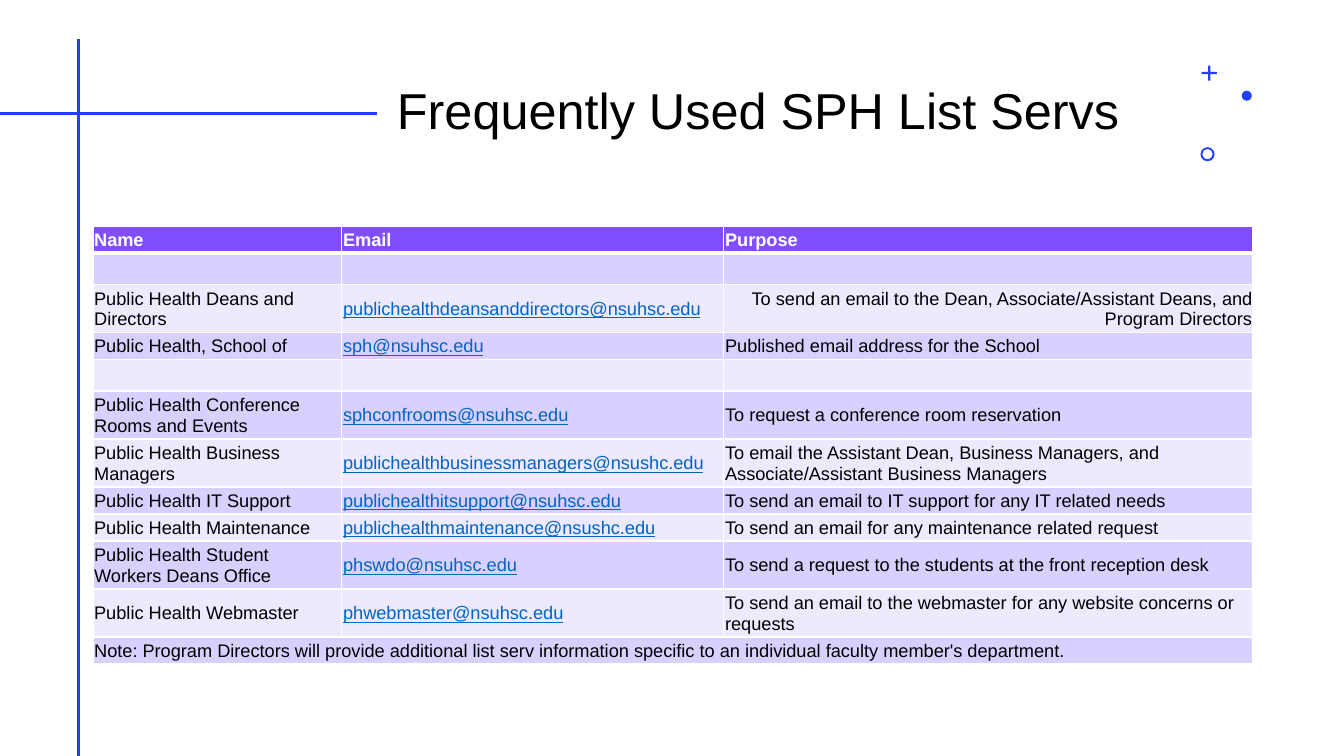
from lxml import etree
from pptx import Presentation
from pptx.dml.color import RGBColor
from pptx.enum.shapes import MSO_CONNECTOR, MSO_SHAPE
from pptx.enum.text import MSO_ANCHOR, PP_ALIGN
from pptx.oxml import parse_xml
from pptx.oxml.ns import nsdecls, qn
from pptx.util import Pt

STRAIGHT = MSO_CONNECTOR.STRAIGHT
CROSS, OVAL, DONUT = MSO_SHAPE.CROSS, MSO_SHAPE.OVAL, MSO_SHAPE.DONUT
MIDDLE = MSO_ANCHOR.MIDDLE
LEFT, RIGHT = PP_ALIGN.LEFT, PP_ALIGN.RIGHT

BLUE, BLACK, WHITE, LINK = "243FFF", "000000", "FFFFFF", "0563C1"
HEADER, BANDS = "814DFF", ("D8D0FF", "EDE9FF")
BODY = {"name": "Arial", "size": Pt(13), "bold": False}
HEAD = {**BODY, "bold": True}
EMAIL = {**BODY, "underline": True}
TITLE = {"name": "Arial", "size": Pt(36)}
CELL = {"vertical_anchor": MIDDLE, "margin_left": Pt(0.9), "margin_right": Pt(0.9),
        "margin_top": Pt(0.9), "margin_bottom": Pt(0)}

SHORT, TALL = 19.3, 34.3
COL_WIDTHS = (177.8, 272.9, 378)
ROWS = [
    (SHORT, "Name", "Email", "Purpose"),
    (SHORT, "", "", ""),
    (TALL, "Public Health Deans and Directors", "publichealthdeansanddirectors@nsuhsc.edu",
     "To send an email to the Dean, Associate/Assistant Deans, and Program Directors"),
    (SHORT, "Public Health, School of", "sph@nsuhsc.edu",
     "Published email address for the School"),
    (SHORT, "", "", ""),
    (TALL, "Public Health Conference Rooms and Events", "sphconfrooms@nsuhsc.edu",
     "To request a conference room reservation"),
    (TALL, "Public Health Business Managers", "publichealthbusinessmanagers@nsushc.edu",
     "To email the Assistant Dean, Business Managers, and "
     "Associate/Assistant Business Managers"),
    (SHORT, "Public Health IT Support", "publichealthitsupport@nsuhsc.edu",
     "To send an email to IT support for any IT related needs"),
    (SHORT, "Public Health Maintenance", "publichealthmaintenance@nsushc.edu",
     "To send an email for any maintenance related request"),
    (TALL, "Public Health Student Workers Deans Office", "phswdo@nsuhsc.edu",
     "To send a request to the students at the front reception desk"),
    (TALL, "Public Health Webmaster", "phwebmaster@nsuhsc.edu",
     "To send an email to the webmaster for any website concerns or requests"),
    (SHORT, "Note: Program Directors will provide additional list serv information "
     "specific to an individual faculty member's department.", "", ""),
]


def rgb(value):
    """Return the colour of a hex string."""
    return RGBColor.from_string(value)


def set_all(obj, values):
    """Set every attribute named in a dict."""
    for name, value in values.items():
        setattr(obj, name, value)


def write(tf, text, font, color, align=LEFT):
    """Write one formatted run into the first paragraph."""
    p = tf.paragraphs[0]
    p.alignment = align
    r = p.add_run()
    r.text = text
    set_all(r.font, font)
    r.font.color.rgb = rgb(color)
    return p


def add_rule(s, x1, y1, x2, y2):
    """Draw a blue straight line."""
    line = s.shapes.add_connector(STRAIGHT, Pt(x1), Pt(y1), Pt(x2), Pt(y2))
    line.line.color.rgb = rgb(BLUE)
    line.line.width = Pt(2)
    etree.SubElement(line._element.spPr, qn("a:effectLst"))


def add_ornament(s, kind, x, y, size, adjust=None):
    """Draw a small blue shape without outline."""
    sp = s.shapes.add_shape(kind, Pt(x), Pt(y), Pt(size), Pt(size))
    sp.shadow.inherit = False
    sp.fill.solid()
    sp.fill.fore_color.rgb = rgb(BLUE)
    sp.line.fill.background()
    if adjust is not None:
        sp.adjustments[0] = adjust


def add_title(s, text):
    """Add the slide title."""
    box = s.shapes.add_textbox(Pt(276.5), Pt(28.8), Pt(563.8), Pt(104.4))
    tf = box.text_frame
    set_all(tf, {"word_wrap": True, "vertical_anchor": MIDDLE})
    write(tf, text, TITLE, BLACK).line_spacing = 0.9


def add_border(cell, side, width):
    """Add a white border to one side of a cell."""
    cell._tc.get_or_add_tcPr().append(parse_xml(
        f'<a:ln{side} {nsdecls("a")} w="{Pt(width)}"><a:solidFill>'
        f'<a:srgbClr val="{WHITE}"/></a:solidFill></a:ln{side}>'))


def style_cell(cell, row, fill):
    """Set the margins, borders and fill of a cell."""
    set_all(cell, CELL)
    widths = {"L": 1, "R": 1, "T": 3 if row == 1 else 1, "B": 3 if row == 0 else 1}
    for side, width in widths.items():
        add_border(cell, side, width)
    cell.fill.solid()
    cell.fill.fore_color.rgb = rgb(fill)


def add_list_table(s):
    """Add the table of mailing lists."""
    height = sum(row[0] for row in ROWS)
    table = s.shapes.add_table(len(ROWS), len(COL_WIDTHS), Pt(66.4), Pt(161.4),
                               Pt(sum(COL_WIDTHS)), Pt(height)).table
    for column, width in zip(table.columns, COL_WIDTHS):
        column.width = Pt(width)
    for i, (row_height, *texts) in enumerate(ROWS):
        table.rows[i].height = Pt(row_height)
        for j, text in enumerate(texts):
            cell = table.cell(i, j)
            style_cell(cell, i, BANDS[(i - 1) % 2] if i else HEADER)
            if i == 0:
                font, color = HEAD, WHITE
            elif j == 1 and text:
                font, color = EMAIL, LINK
            else:
                font, color = BODY, BLACK
            align = RIGHT if (i, j) == (2, 2) else LEFT
            write(cell.text_frame, text, font, color, align)
    last = len(ROWS) - 1
    for j in range(1, len(COL_WIDTHS)):
        table.cell(last, j).text_frame.clear()
    table.cell(last, 0).merge(table.cell(last, len(COL_WIDTHS) - 1))


def main():
    """Build and save the slide."""
    prs = Presentation()
    set_all(prs, {"slide_width": Pt(960), "slide_height": Pt(540)})
    s = prs.slides.add_slide(prs.slide_layouts[6])
    add_rule(s, 56.2, 28, 56.2, 540)
    add_title(s, "Frequently Used SPH List Servs")
    add_ornament(s, CROSS, 858.4, 46.8, 10.8, 0.43)
    add_ornament(s, OVAL, 887, 64.8, 7.2)
    add_rule(s, 0, 80.8, 269.6, 80.8)
    add_ornament(s, DONUT, 857.5, 105.1, 10.1, 0.14)
    add_list_table(s)
    prs.save("out.pptx")


if __name__ == "__main__":
    main()
